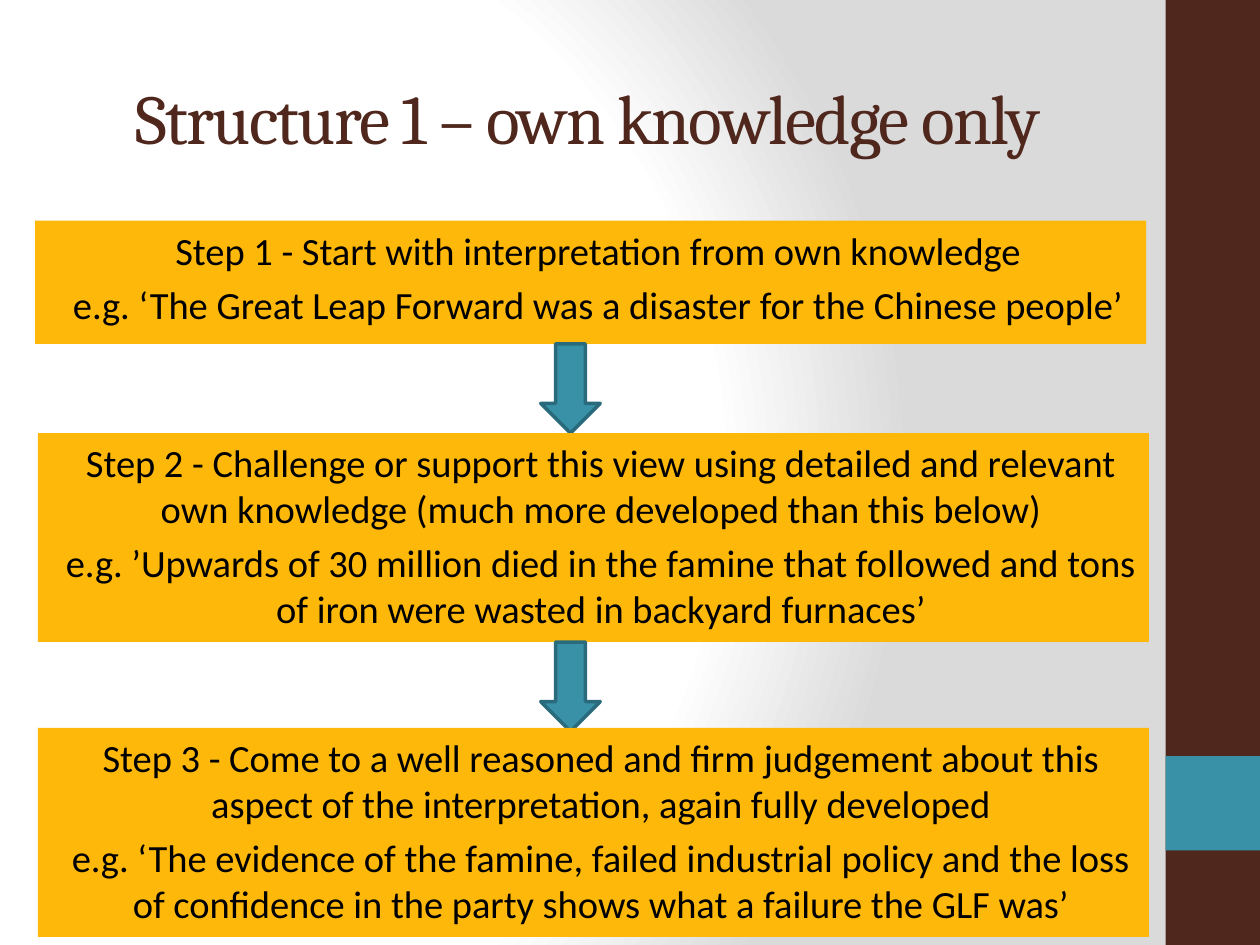
"""Build a slide of three essay steps joined by arrows."""
import pptx
import pptx.dml.color
import pptx.enum.shapes
import pptx.enum.text
import pptx.oxml
import pptx.util

Pt = pptx.util.Pt
KIND = pptx.enum.shapes.MSO_SHAPE
ANCHOR = pptx.enum.text.MSO_ANCHOR

TITLE = "Structure 1 – own knowledge only"
STEPS = [
    (20, 126, 70.5, [
        "Step 1 - Start with interpretation from own knowledge",
        "e.g. ‘The Great Leap Forward was a disaster for the Chinese people’"]),
    (21.6, 247.5, 119.4, [
        "Step 2 - Challenge or support this view using detailed and relevant "
        "own knowledge (much more developed than this below)",
        "e.g. ’Upwards of 30 million died in the famine that followed and tons "
        "of iron were wasted in backyard furnaces’"]),
    (21.6, 416, 119.4, [
        "Step 3 - Come to a well reasoned and firm judgement about this "
        "aspect of the interpretation, again fully developed",
        "e.g. ‘The evidence of the famine, failed industrial policy and the loss "
        "of confidence in the party shows what a failure the GLF was’"]),
]
STOPS = [(0, "FFFFFF"), (75, "FFFFFF"), (100, "DADADA")]
BROWN, TEAL, EDGE, GOLD, BLACK = "4F271C", "3891A7", "296B7C", "FEB80A", "000000"
WIDE, HIGH, SIDE = 720, 540, 54
STEP_W = 635
ARROW_X, ARROW_W, ARROW_H = 309, 34, 51


def color(code):
    return pptx.dml.color.RGBColor.from_string(code)


def shade(slide):
    """Fill the background with a circular gradient."""
    stops = "".join(
        f'<a:gs pos="{at * 1000}"><a:srgbClr val="{code}"/></a:gs>' for at, code in STOPS)
    names = pptx.oxml.ns.nsdecls("p", "a")
    back = pptx.oxml.parse_xml(
        f'<p:bg {names}><p:bgPr><a:gradFill rotWithShape="1"><a:gsLst>{stops}</a:gsLst>'
        '<a:path path="circle"><a:fillToRect l="20000" t="50000" r="100000" b="50000"/>'
        '</a:path></a:gradFill><a:effectLst/></p:bgPr></p:bg>')
    slide.element.cSld.insert(0, back)


def block(slide, box, fill, kind=KIND.RECTANGLE, line=None):
    """Add a filled shape."""
    shape = slide.shapes.add_shape(kind, *map(Pt, box))
    shape.shadow.inherit = False
    shape.fill.solid()
    shape.fill.fore_color.rgb = color(fill)
    if line:
        shape.line.color.rgb = color(line)
        shape.line.width = Pt(2)
    else:
        shape.line.fill.background()
    return shape


def write(shape, lines, font="Calibri", size=22, ink=BLACK, anchor=ANCHOR.TOP,
          before=0, indent=0, space=0):
    """Put centred paragraphs into a shape."""
    frame = shape.text_frame
    frame.word_wrap = True
    frame.vertical_anchor = anchor
    for i, text in enumerate(lines):
        para = frame.add_paragraph() if i else frame.paragraphs[0]
        para.alignment = pptx.enum.text.PP_ALIGN.CENTER
        para.space_before = Pt(before)
        para.font.size = Pt(size)
        if indent:
            para._p.get_or_add_pPr().set("marL", str(Pt(indent)))
        run = para.add_run()
        run.text = text
        run.font.name = font
        run.font.size = Pt(size)
        run.font.color.rgb = color(ink)
        if space:
            run.font._element.set("spc", str(space * 100))


def main():
    """Build and save the slide."""
    deck = pptx.Presentation()
    deck.slide_width, deck.slide_height = Pt(WIDE), Pt(HIGH)
    slide = deck.slides.add_slide(deck.slide_layouts[6])
    shade(slide)
    left = WIDE - SIDE - 0
    block(slide, (left, 0, SIDE, HIGH), BROWN)
    block(slide, (left, HIGH - 2 * SIDE, SIDE, SIDE), TEAL)
    title = slide.shapes.add_textbox(*map(Pt, (36, 21.6, 600, 90)))
    write(title, [TITLE], font="Cambria", size=40, ink=BROWN,
          anchor=ANCHOR.MIDDLE, space=-1)
    for i, (x, y, high, lines) in enumerate(STEPS):
        step = block(slide, (x, y, STEP_W, high), GOLD)
        write(step, lines, before=4.4, indent=8.64)
        if i < len(STEPS) - 1:
            block(slide, (ARROW_X, y + high, ARROW_W, ARROW_H), TEAL,
                  kind=KIND.DOWN_ARROW, line=EDGE)
    deck.save("out.pptx")


if __name__ == "__main__":
    main()
